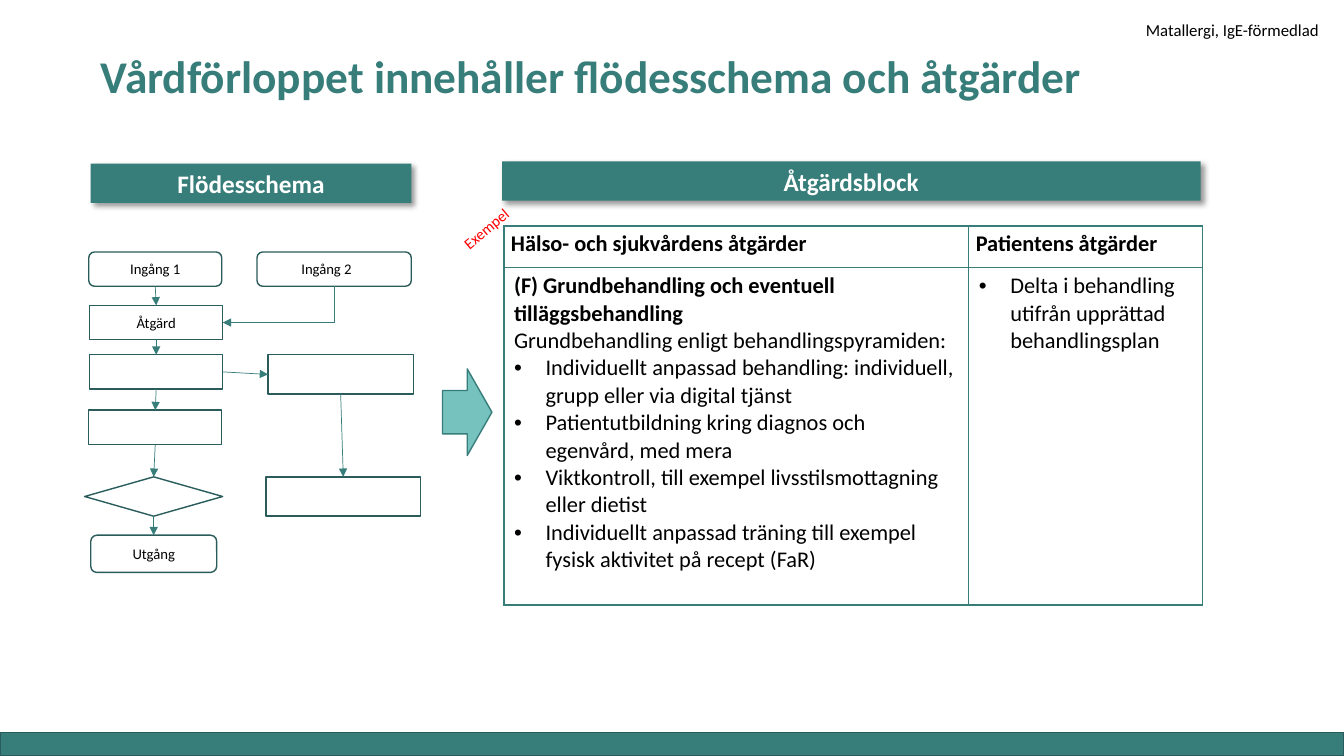
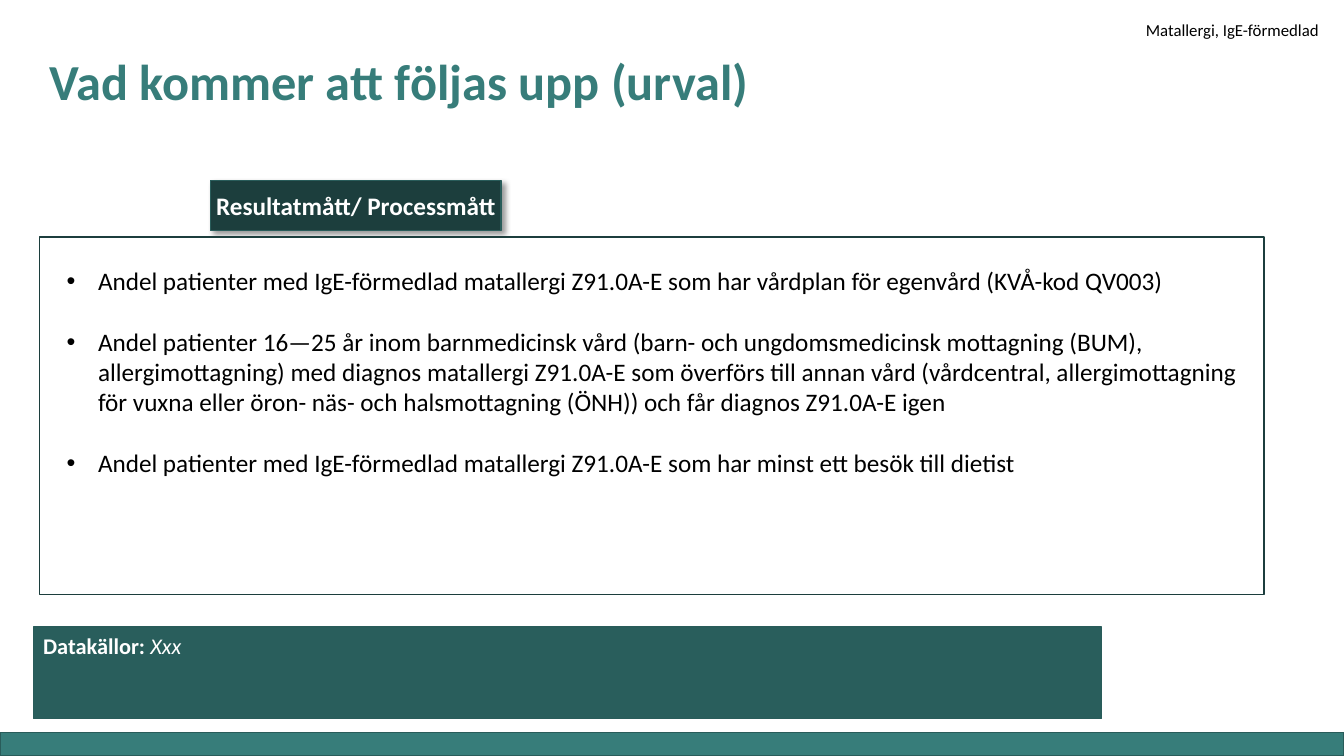
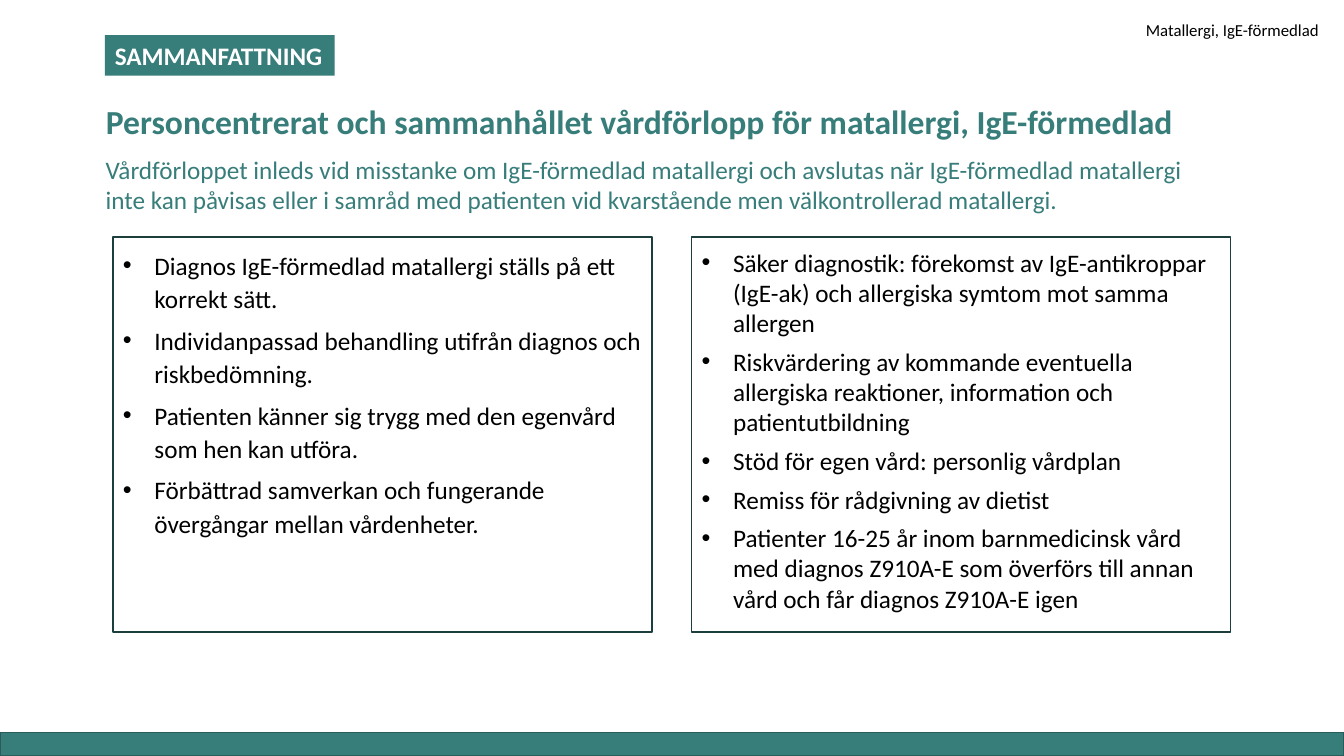
"""Build three slides on the care pathway for IgE-mediated food allergy."""
from dataclasses import dataclass

from lxml import etree
from pptx import Presentation
from pptx.dml.color import RGBColor
from pptx.enum.shapes import MSO_CONNECTOR, MSO_SHAPE
from pptx.enum.text import MSO_ANCHOR, MSO_AUTO_SIZE, PP_ALIGN
from pptx.oxml.ns import qn
from pptx.util import Pt

RECT, ROUND, DIAMOND = MSO_SHAPE.RECTANGLE, MSO_SHAPE.ROUNDED_RECTANGLE, MSO_SHAPE.DIAMOND
ARROW = MSO_SHAPE.RIGHT_ARROW
STRAIGHT, ELBOW = MSO_CONNECTOR.STRAIGHT, MSO_CONNECTOR.ELBOW
TOP, MIDDLE, BOTTOM = MSO_ANCHOR.TOP, MSO_ANCHOR.MIDDLE, MSO_ANCHOR.BOTTOM
LEFT, CENTER = PP_ALIGN.LEFT, PP_ALIGN.CENTER
FIXED = MSO_AUTO_SIZE.NONE
SITE_TOP, SITE_LEFT, SITE_BOTTOM, SITE_RIGHT = range(4)


@dataclass(frozen=True)
class Theme:
    font: str = "Calibri"
    teal: str = "377D7A"
    edge: str = "295C5A"
    panel: str = "295E5C"
    dark: str = "1C3E3D"
    light: str = "76C2BF"
    white: str = "FFFFFF"
    black: str = "000000"
    red: str = "FF0000"
    text: float = 18
    table: float = 16
    topic: float = 12
    example: float = 11
    flow: float = 10.5
    indent: float = 22.5


theme = Theme()


def write(frame, *lines, size=theme.text, color=theme.black, bold=False, align=LEFT, anchor=None,
          inset=(7.2, 3.6, 7.2, 3.6), wrap=True, bullet=False, spacing=1.0, before=0):
    if anchor is not None:
        frame.auto_size = FIXED
        frame.word_wrap = wrap
        frame.vertical_anchor = anchor
        frame.margin_left, frame.margin_top, frame.margin_right, frame.margin_bottom = map(Pt, inset)
    for line in lines:
        is_first = not frame.text
        paragraph = frame.paragraphs[0] if is_first else frame.add_paragraph()
        paragraph.alignment = align
        paragraph.line_spacing = spacing
        paragraph.space_before = Pt(0 if is_first else before)
        paragraph.space_after = Pt(0)
        if bullet:
            properties = paragraph._p.get_or_add_pPr()
            properties.set("marL", str(Pt(theme.indent)))
            properties.set("indent", str(-Pt(theme.indent)))
            etree.SubElement(properties, qn("a:buFont"), typeface="Arial")
            etree.SubElement(properties, qn("a:buChar"), char="•")
        run = paragraph.add_run()
        run.text = line
        run.font.name = theme.font
        run.font.size = Pt(size)
        run.font.bold = bold
        run.font.color.rgb = RGBColor.from_string(color)
    return paragraph


def block(slide, kind, box, fill=None, line=None, shadow=False):
    shape = slide.shapes.add_shape(kind, *map(Pt, box))
    shape.shadow.inherit = False
    for part, color in ((shape.fill, fill), (shape.line.fill, line)):
        if color:
            part.solid()
            part.fore_color.rgb = RGBColor.from_string(color)
        else:
            part.background()
    if line:
        shape.line.width = Pt(1)
    if shadow:
        effects = shape.element.spPr.find(qn("a:effectLst"))
        outer = etree.SubElement(effects, qn("a:outerShdw"), blurRad=str(Pt(4)), dist=str(Pt(3)),
                                 dir="2700000", algn="tl", rotWithShape="0")
        tint = etree.SubElement(outer, qn("a:srgbClr"), val=theme.black)
        etree.SubElement(tint, qn("a:alpha"), val="40000")
    return shape


prs = Presentation()
prs.slide_width, prs.slide_height = Pt(960), Pt(540)

slides = []
for layout, heading, size, box in (
    (5, "Vårdförloppet innehåller flödesschema och åtgärder", 32.4, (64.8, 29.5, 720, 48.2)),
    (1, "Vad kommer att följas upp (urval)", 36, (28, 35.3, 720, 48.2)),
    (3, "Personcentrerat och sammanhållet vårdförlopp för matallergi, IgE-förmedlad", 24,
     (68.4, 56.9, 891.6, 48.2)),
):
    slide = prs.slides.add_slide(prs.slide_layouts[layout])
    title = slide.shapes.title
    title.left, title.top, title.width, title.height = map(Pt, box)
    write(title.text_frame, heading, size=size, color=theme.teal, bold=True, anchor=BOTTOM, spacing=0.9)
    slides.append(slide)
flow_slide, measures_slide, summary_slide = slides

band = block(flow_slide, RECT, (0, 523.4, 960, 16.6), theme.teal, theme.edge)
topic = flow_slide.shapes.add_textbox(*map(Pt, (811.4, 10.8, 138.2, 21.6)))
write(topic.text_frame, "Matallergi, IgE-förmedlad", size=theme.topic, anchor=TOP)
for number, shared in enumerate((band, topic), 100):
    shared.element.xpath(".//p:cNvPr")[0].set("id", str(number))
    prs.slide_master.shapes.element.append(shared.element)

for heading, box in (
    ("Flödesschema", (64.8, 116.8, 229, 28.1)),
    ("Åtgärdsblock", (358.6, 115.2, 499, 28.1)),
):
    header = block(flow_slide, RECT, box, theme.teal, shadow=True)
    write(header.text_frame, heading, color=theme.white, bold=True, align=CENTER, anchor=MIDDLE)
block(flow_slide, ARROW, (316.1, 263.5, 35.3, 61.9), theme.light, theme.teal)

actions = flow_slide.shapes.add_table(2, 2, *map(Pt, (360, 161.5, 499, 270.7))).table
actions.first_row = actions.horz_banding = False
for column, width in zip(actions.columns, (332, 167)):
    column.width = Pt(width)
for row, height in zip(actions.rows, (29.5, 241.2)):
    row.height = Pt(height)
for cell in actions.iter_cells():
    for side in ("a:lnL", "a:lnR", "a:lnT", "a:lnB"):
        border = etree.SubElement(cell._tc.get_or_add_tcPr(), qn(side), w=str(Pt(1)))
        paint = etree.SubElement(border, qn("a:solidFill"))
        etree.SubElement(paint, qn("a:srgbClr"), val=theme.teal)
    cell.fill.background()
for index, heading in enumerate(("Hälso- och sjukvårdens åtgärder", "Patientens åtgärder")):
    cell = actions.cell(0, index)
    cell.margin_left = cell.margin_right = Pt(5)
    cell.margin_top = cell.margin_bottom = Pt(0)
    write(cell.text_frame, heading, size=theme.table, bold=True, spacing=1.15)
care = actions.cell(1, 0).text_frame
write(care, "(F) Grundbehandling och eventuell tilläggsbehandling", size=theme.table, bold=True)
write(care, "Grundbehandling enligt behandlingspyramiden:", size=theme.table)
write(care,
      "Individuellt anpassad behandling: individuell, grupp eller via digital tjänst",
      "Patientutbildning kring diagnos och egenvård, med mera",
      "Viktkontroll, till exempel livsstilsmottagning eller dietist",
      "Individuellt anpassad träning till exempel fysisk aktivitet på recept (FaR)",
      size=theme.table, bullet=True)
write(actions.cell(1, 1).text_frame, "Delta i behandling utifrån upprättad behandlingsplan",
      size=theme.table, bullet=True)

example = flow_slide.shapes.add_textbox(*map(Pt, (321.1, 152.6, 53.3, 20.9)))
example.rotation = 320
write(example.text_frame, "Exempel", size=theme.example, color=theme.red, anchor=TOP, wrap=False)

steps = {}
for step, kind, box, label, right_inset in (
    ("entry 1", ROUND, (63.4, 180, 95, 24.5), "Ingång 1", 7.2),
    ("entry 2", ROUND, (183.6, 180, 110.2, 24.5), "Ingång 2", 18),
    ("action", RECT, (64.1, 218.2, 95, 24.5), "Åtgärd", 7.2),
    ("second", RECT, (64.1, 253.4, 95, 24.5), "", 0),
    ("third", RECT, (63.4, 293, 95, 24.5), "", 0),
    ("decision", DIAMOND, (60.5, 340.6, 98.6, 28.1), "", 0),
    ("exit", ROUND, (64.8, 382.3, 90, 26.6), "Utgång", 7.2),
    ("branch", RECT, (191.5, 253.4, 103.7, 28.1), "", 0),
    ("branch end", RECT, (190.1, 340.6, 110.2, 28.1), "", 0),
):
    steps[step] = block(flow_slide, kind, box, line=theme.edge)
    if label:
        write(steps[step].text_frame, label, size=theme.flow, align=CENTER, anchor=MIDDLE,
              inset=(7.2, 0, right_inset, 0))

for kind, start, start_site, end, end_site, arrow_end in (
    (STRAIGHT, "entry 1", SITE_BOTTOM, "action", SITE_TOP, "a:tailEnd"),
    (STRAIGHT, "action", SITE_BOTTOM, "second", SITE_TOP, "a:tailEnd"),
    (STRAIGHT, "second", SITE_BOTTOM, "third", SITE_TOP, "a:tailEnd"),
    (STRAIGHT, "third", SITE_BOTTOM, "decision", SITE_TOP, "a:tailEnd"),
    (STRAIGHT, "decision", SITE_BOTTOM, "exit", SITE_TOP, "a:tailEnd"),
    (STRAIGHT, "second", SITE_RIGHT, "branch", SITE_LEFT, "a:tailEnd"),
    (STRAIGHT, "branch", SITE_BOTTOM, "branch end", SITE_TOP, "a:tailEnd"),
    (ELBOW, "action", SITE_RIGHT, "entry 2", SITE_BOTTOM, "a:headEnd"),
):
    link = flow_slide.shapes.add_connector(kind, 0, 0, 0, 0)
    link.begin_connect(steps[start], start_site)
    link.end_connect(steps[end], end_site)
    if kind == ELBOW:
        link.element.spPr.find(qn("a:prstGeom")).set("prst", "bentConnector2")
    link.line.color.rgb = RGBColor.from_string(theme.teal)
    link.line.width = Pt(0.5)
    etree.SubElement(link.line._get_or_add_ln(), qn(arrow_end), type="triangle")
    etree.SubElement(link.element.spPr, qn("a:effectLst"))

measure_tag = block(measures_slide, RECT, (150.5, 128.9, 207.4, 36), theme.dark, theme.edge, shadow=True)
write(measure_tag.text_frame, "Resultatmått/ Processmått", color=theme.white, bold=True,
      align=CENTER, anchor=MIDDLE, inset=(0, 0, 0, 0))
sources = block(measures_slide, RECT, (23.8, 447.8, 763.2, 65.5), theme.panel, theme.edge)
source_line = write(sources.text_frame, "Datakällor: ", size=theme.table, color=theme.white, bold=True, anchor=TOP)
source_name = source_line.add_run()
source_name.text = "Xxx"
source_name.font.name = theme.font
source_name.font.size = Pt(theme.table)
source_name.font.italic = True
source_name.font.color.rgb = RGBColor.from_string(theme.white)
measure_frame = block(measures_slide, RECT, (28, 169.2, 874.8, 255.6), theme.white, theme.dark)
measures = measures_slide.placeholders[1]
measures.left, measures.top, measures.width, measures.height = map(Pt, (40.3, 185.8, 854.6, 159.8))
measure_frame.element.addnext(measures.element)
write(measures.text_frame,
      "Andel patienter med IgE-förmedlad matallergi Z91.0A-E som har vårdplan för egenvård (KVÅ-kod QV003)",
      "Andel patienter 16—25 år inom barnmedicinsk vård (barn- och ungdomsmedicinsk mottagning (BUM), "
      "allergimottagning) med diagnos matallergi Z91.0A-E som överförs till annan vård (vårdcentral, "
      "allergimottagning för vuxna eller öron- näs- och halsmottagning (ÖNH)) och får diagnos Z91.0A-E igen",
      "Andel patienter med IgE-förmedlad matallergi Z91.0A-E som har minst ett besök till dietist",
      anchor=TOP, bullet=True, before=22)

for index, left, spacing, points in (
    (1, 80.6, 1.1, (
        "Diagnos IgE-förmedlad matallergi ställs på ett korrekt sätt.",
        "Individanpassad behandling utifrån diagnos och riskbedömning.",
        "Patienten känner sig trygg med den egenvård som hen kan utföra.",
        "Förbättrad samverkan och fungerande övergångar mellan vårdenheter.")),
    (2, 493.9, 1.0, (
        "Säker diagnostik: förekomst av IgE-antikroppar (IgE-ak) och allergiska symtom mot samma allergen",
        "Riskvärdering av kommande eventuella allergiska reaktioner, information och patientutbildning",
        "Stöd för egen vård: personlig vårdplan",
        "Remiss för rådgivning av dietist",
        "Patienter 16-25 år inom barnmedicinsk vård med diagnos Z910A-E som överförs till annan vård "
        "och får diagnos Z910A-E igen")),
):
    column = summary_slide.placeholders[index]
    column.left, column.top, column.width, column.height = map(Pt, (left, 169.2, 385.2, 282.2))
    column.fill.solid()
    column.fill.fore_color.rgb = RGBColor.from_string(theme.white)
    column.line.color.rgb = RGBColor.from_string(theme.dark)
    column.line.width = Pt(1)
    write(column.text_frame, *points, anchor=TOP, inset=(7.2, 7.2, 7.2, 3.6), bullet=True,
          spacing=spacing, before=6)
scope = summary_slide.shapes.add_textbox(*map(Pt, (68.4, 106.6, 811.4, 51.1)))
write(scope.text_frame,
      "Vårdförloppet inleds vid misstanke om IgE-förmedlad matallergi och avslutas när IgE-förmedlad "
      "matallergi inte kan påvisas eller i samråd med patienten vid kvarstående men välkontrollerad matallergi.",
      color=theme.teal, anchor=TOP)
summary_tag = block(summary_slide, RECT, (74.9, 25.2, 164.2, 28.8), theme.teal)
write(summary_tag.text_frame, "SAMMANFATTNING", color=theme.white, bold=True, anchor=TOP, wrap=False)

prs.save("out.pptx")
